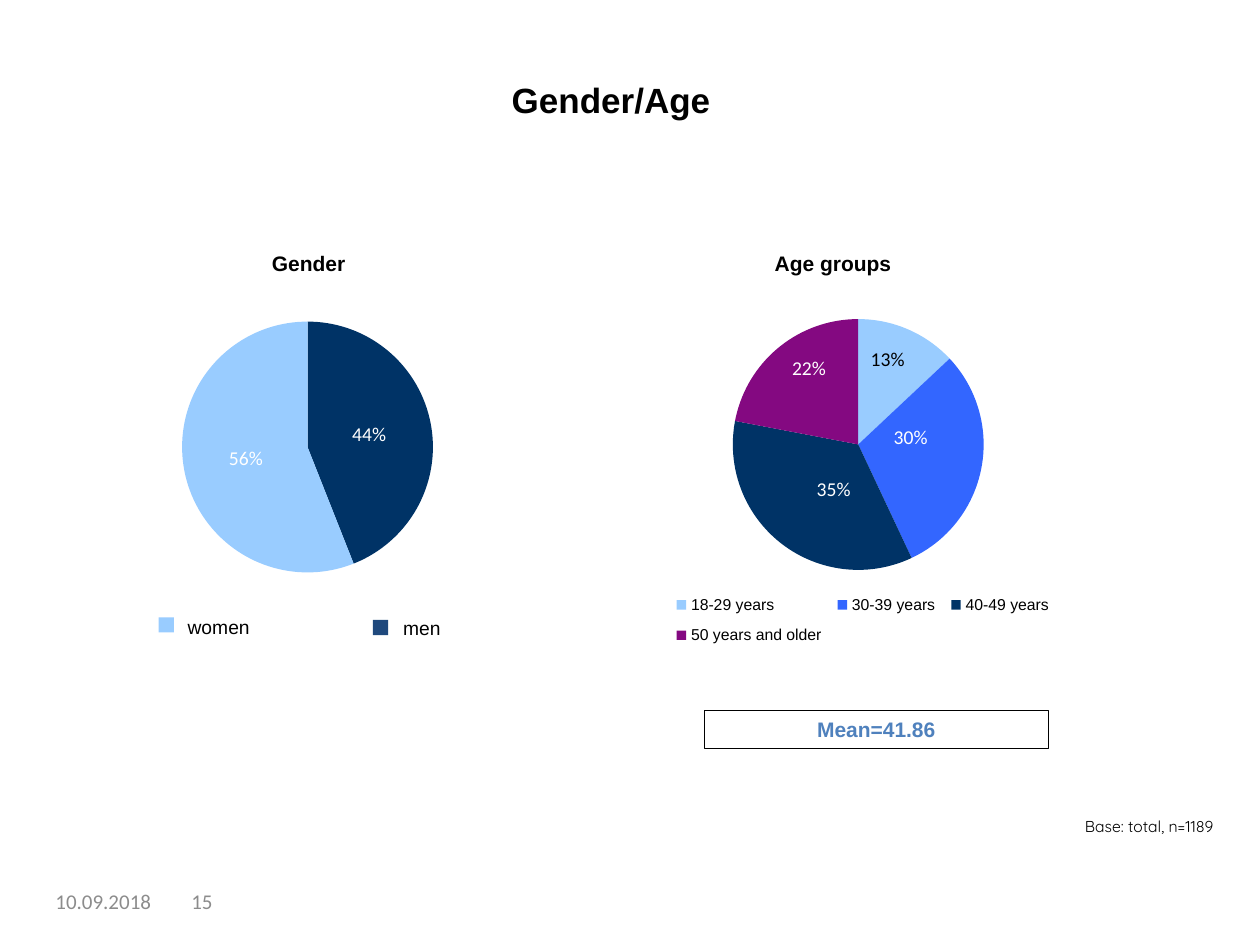
from dataclasses import dataclass

import pptx
import pptx.chart.data
import pptx.dml.color
import pptx.enum.chart
import pptx.enum.shapes
import pptx.enum.text
import pptx.oxml
import pptx.oxml.ns
import pptx.util

Inches = pptx.util.Inches
Align = pptx.enum.text.PP_ALIGN
Anchor = pptx.enum.text.MSO_ANCHOR
Box = tuple[float, float, float, float]


@dataclass(frozen=True)
class Theme:
    black: str = "000000"
    white: str = "FFFFFF"
    sky: str = "99CCFF"
    blue: str = "3366FF"
    navy: str = "003366"
    plum: str = "840981"
    steel: str = "1F497D"
    accent: str = "4F81BD"
    grey: str = "8C8C8C"
    head: float = 20
    chart: float = 18
    sub: float = 12
    key: float = 11
    label: float = 11.2
    small: float = 9
    sans: str = "Arial"
    plain: str = "Calibri"
    soft: str = "Quicksand"


THEME = Theme()


@dataclass(frozen=True)
class Label:
    text: str
    box: Box
    size: float = THEME.sub
    font: str = THEME.sans
    color: str = THEME.black
    bold: bool = False
    align: Align = Align.LEFT
    anchor: Anchor = Anchor.TOP
    inset: tuple[float, float] = (0.1, 0.05)


@dataclass(frozen=True)
class Wedge:
    name: str
    value: float
    fill: str
    ink: str = THEME.white
    shift: tuple[float, float] = (0, 0)


@dataclass(frozen=True)
class Pie:
    box: Box
    plot: Box
    wedges: tuple[Wedge, ...]
    legend: Box | None = None


@dataclass(frozen=True)
class Key:
    label: Label
    box: Box
    fill: str


PIES = (
    Pie((4.99, 1.7, 3.68, 3.62), (0, 0.23, 0.99, 0.55), (
        Wedge("18-29 years", 0.13, THEME.sky, THEME.black, (0.01, -0.06)),
        Wedge("30-39 years", 0.3, THEME.blue, shift=(-0.02, -0.04)),
        Wedge("40-49 years", 0.35, THEME.navy, shift=(0.03, -0.01)),
        Wedge("50 years and older", 0.22, THEME.plum, shift=(-0.02, -0.06)),
    ), (0.08, 0.81, 0.85, 0.16)),
    Pie((0.62, 1.72, 3.68, 3.62), (0.07, 0.23, 0.85, 0.55), (
        Wedge("1", 0.44, THEME.navy),
        Wedge("2", 0.56, THEME.sky),
    )),
)
TITLE = Label("Gender/Age", (0.28, 0.29, 9.14, 0.67), THEME.head, bold=True,
              align=Align.CENTER, anchor=Anchor.BOTTOM, inset=(0, 0))
MEAN = Label("Mean=41.86", (5.59, 5.64, 2.73, 0.3), color=THEME.accent,
             bold=True, align=Align.CENTER)
LABELS = (
    Label("Gender", (1.78, 1.94, 1.34, 0.3), bold=True, align=Align.CENTER),
    Label("Age groups", (6.05, 1.94, 1.54, 0.3), bold=True),
    Label("15", (1.42, 6.95, 0.52, 0.4), font=THEME.plain, color=THEME.grey,
          anchor=Anchor.MIDDLE),
    Label("10.09.2018", (0.44, 6.95, 0.92, 0.4), font=THEME.plain,
          color=THEME.grey, anchor=Anchor.MIDDLE, inset=(0, 0)),
    Label("Base: total, n=1189", (7.68, 6.42, 2.07, 0.27), THEME.small,
          THEME.soft, align=Align.RIGHT, inset=(0.12, 0.06)),
)
KEYS = (
    Key(Label("women", (1.39, 4.83, 0.71, 0.29), THEME.key),
        (1.26, 4.9, 0.12, 0.12), THEME.sky),
    Key(Label("men", (3.1, 4.84, 0.71, 0.29), THEME.key),
        (2.96, 4.92, 0.12, 0.12), THEME.steel),
)


def tint(code: str) -> pptx.dml.color.RGBColor:
    return pptx.dml.color.RGBColor.from_string(code)


def spots(box: Box) -> list[int]:
    return [Inches(side) for side in box]


def style(font, size: float, name: str, color: str) -> None:
    font.size, font.name = pptx.util.Pt(size), name
    font.color.rgb = tint(color)


def write(shape, label: Label) -> None:
    frame = shape.text_frame
    frame.word_wrap = True
    frame.auto_size = pptx.enum.text.MSO_AUTO_SIZE.NONE
    frame.vertical_anchor = label.anchor
    side, edge = map(Inches, label.inset)
    frame.margin_left = frame.margin_right = side
    frame.margin_top = frame.margin_bottom = edge
    line = frame.paragraphs[0]
    line.alignment = label.align
    run = line.add_run()
    run.text = label.text
    run.font.bold = label.bold
    style(run.font, label.size, label.font, label.color)


def add_label(slide, label: Label) -> None:
    write(slide.shapes.add_textbox(*spots(label.box)), label)


def add_box(slide, box: Box, fill: str | None = None):
    """Draw a filled square, or an outlined box when no fill is given."""
    shape = slide.shapes.add_shape(
        pptx.enum.shapes.MSO_SHAPE.RECTANGLE, *spots(box))
    shape.shadow.inherit = False
    if fill:
        shape.fill.solid()
        shape.fill.fore_color.rgb = tint(fill)
        shape.line.fill.background()
    else:
        shape.fill.background()
        shape.line.color.rgb = tint(THEME.black)
        shape.line.width = pptx.util.Pt(0.75)
    return shape


def layout(values: tuple[float, ...], target: str = "", mode: str = ""):
    """Make a manual layout from x, y and, if given, width and height."""
    rows = f'<c:layoutTarget val="{target}"/>' if target else ""
    if mode:
        rows += f'<c:xMode val="{mode}"/><c:yMode val="{mode}"/>'
    rows += "".join(f'<c:{tag} val="{val}"/>' for tag, val in zip("xywh", values))
    return pptx.oxml.parse_xml(
        f'<c:layout {pptx.oxml.ns.nsdecls("c")}>'
        f"<c:manualLayout>{rows}</c:manualLayout></c:layout>")


def place(parent, node, after: str | None = None) -> None:
    """Put a layout in a chart element, replacing any it already has."""
    for old in parent.findall(pptx.oxml.ns.qn("c:layout")):
        parent.remove(old)
    if after:
        parent.find(pptx.oxml.ns.qn(after)).addnext(node)
    else:
        parent.insert(0, node)


def mark(point, wedge: Wedge) -> None:
    point.format.fill.solid()
    point.format.fill.fore_color.rgb = tint(wedge.fill)
    label = point.data_label
    style(label.font, THEME.label, THEME.plain, wedge.ink)
    label.position = pptx.enum.chart.XL_LABEL_POSITION.CENTER


def add_pie(slide, pie: Pie) -> None:
    data = pptx.chart.data.CategoryChartData(number_format="0%")
    data.categories = [wedge.name for wedge in pie.wedges]
    data.add_series("Series 1", [wedge.value for wedge in pie.wedges])
    chart = slide.shapes.add_chart(
        pptx.enum.chart.XL_CHART_TYPE.PIE, *spots(pie.box), data).chart
    chart.has_title = False
    style(chart.font, THEME.chart, THEME.plain, THEME.black)
    plot = chart.plots[0]
    plot.vary_by_categories = True
    series = plot.series[0]
    labels = series.data_labels
    labels.show_value = True
    labels.number_format, labels.number_format_is_linked = "0%", False
    for rank, wedge in enumerate(pie.wedges):
        mark(series.points[rank], wedge)
    tags = list(series._element.iter(pptx.oxml.ns.qn("c:dLbl")))
    for tag, wedge in zip(tags, pie.wedges):
        form = pptx.oxml.parse_xml(
            f'<c:numFmt {pptx.oxml.ns.nsdecls("c")} '
            'formatCode="0%" sourceLinked="0"/>')
        tag.find(pptx.oxml.ns.qn("c:idx")).addnext(form)
        if any(wedge.shift):
            place(tag, layout(wedge.shift), "c:idx")
    area = chart._chartSpace.chart.plotArea
    place(area, layout(pie.plot, "inner", "edge"))
    chart.has_legend = pie.legend is not None
    if pie.legend:
        legend = chart.legend
        legend.position = pptx.enum.chart.XL_LEGEND_POSITION.BOTTOM
        legend.include_in_layout = False
        style(legend.font, THEME.small, THEME.sans, THEME.black)
        place(legend._element, layout(pie.legend, mode="edge"), "c:legendPos")


def main() -> None:
    deck = pptx.Presentation()
    deck.slide_width, deck.slide_height = Inches(10), Inches(7.5)
    slide = deck.slides.add_slide(deck.slide_layouts[5])
    title = slide.shapes.title
    title.left, title.top, title.width, title.height = spots(TITLE.box)
    write(title, TITLE)
    for pie in PIES:
        add_pie(slide, pie)
    for label in LABELS:
        add_label(slide, label)
    write(add_box(slide, MEAN.box), MEAN)
    for key in KEYS:
        add_box(slide, key.box, key.fill)
        add_label(slide, key.label)
    deck.save("out.pptx")


if __name__ == "__main__":
    main()
